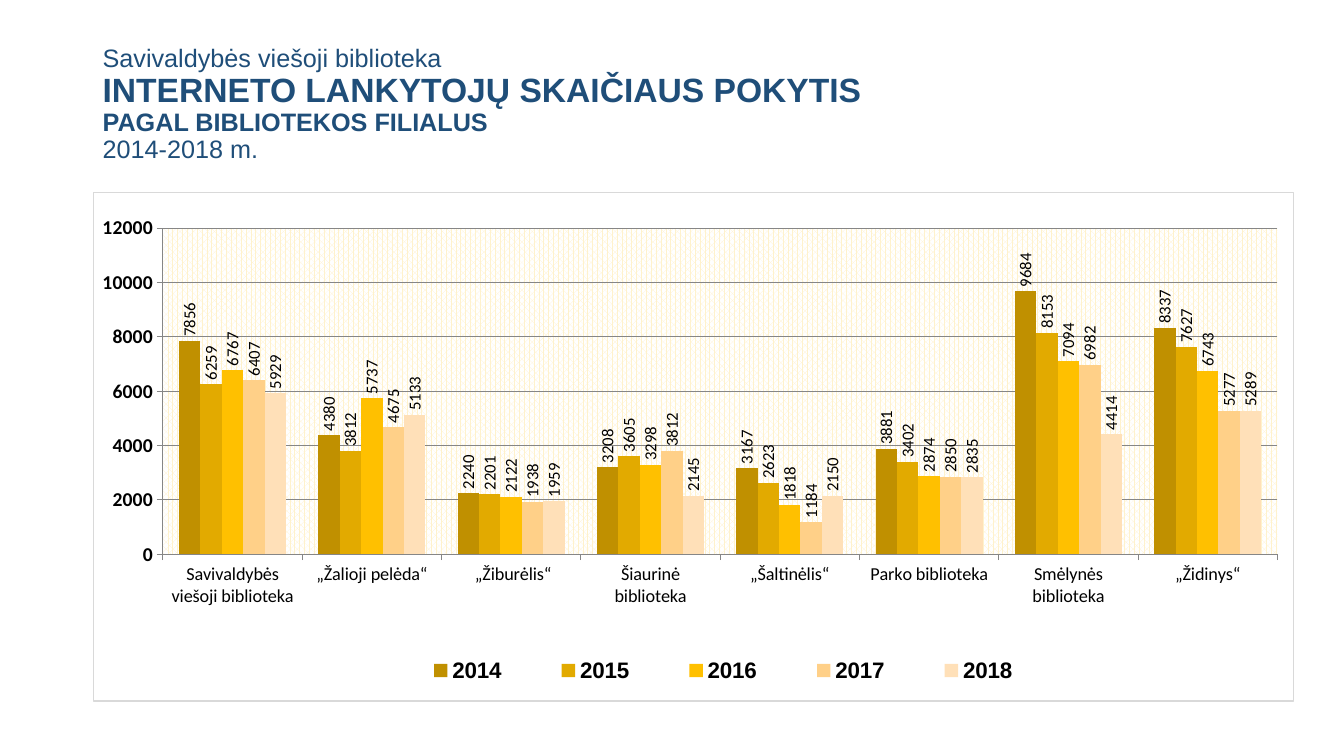
import pptx
import pptx.chart.data
import pptx.dml.color
import pptx.enum.chart
import pptx.enum.text
import pptx.oxml
import pptx.oxml.ns
import pptx.util

Inches = pptx.util.Inches
Pt = pptx.util.Pt
RGBColor = pptx.dml.color.RGBColor
qn = pptx.oxml.ns.qn

NAVY = RGBColor(0x1F, 0x4E, 0x79)
BLACK = RGBColor(0, 0, 0)
GREY = RGBColor(0x86, 0x86, 0x86)
BORDER = RGBColor(0xD9, 0xD9, 0xD9)
CREAM = RGBColor(0xFF, 0xF2, 0xCC)
WHITE = RGBColor(0xFF, 0xFF, 0xFF)
YEAR_COLORS = [
    RGBColor(0xC0, 0x90, 0x00),
    RGBColor(0xE2, 0xAA, 0x00),
    RGBColor(0xFF, 0xC0, 0x00),
    RGBColor(0xFF, 0xD0, 0x88),
    RGBColor(0xFF, 0xE0, 0xB8),
]

# text, size, bold
TITLE = [
    ("Savivaldybės viešoji biblioteka ", 18, False),
    ("INTERNETO LANKYTOJŲ SKAIČIAUS POKYTIS", 24, True),
    ("PAGAL BIBLIOTEKOS FILIALUS", 18, True),
    ("2014-2018 m.", 18, False),
]
LIBRARIES = [
    "Savivaldybės viešoji biblioteka", "„Žalioji pelėda“", " „Žiburėlis“",
    "Šiaurinė biblioteka", "„Šaltinėlis“", "Parko biblioteka",
    "Smėlynės biblioteka", "„Židinys“",
]
VISITORS = {
    "2014": (7856, 4380, 2240, 3208, 3167, 3881, 9684, 8337),
    "2015": (6259, 3812, 2201, 3605, 2623, 3402, 8153, 7627),
    "2016": (6767, 5737, 2122, 3298, 1818, 2874, 7094, 6743),
    "2017": (6407, 4675, 1938, 3812, 1184, 2850, 6982, 5277),
    "2018": (5929, 5133, 1959, 2145, 2150, 2835, 4414, 5289),
}


def chart_xml(tag, inner):
    return pptx.oxml.parse_xml(
        f'<c:{tag} {pptx.oxml.ns.nsdecls("c", "a")}>{inner}</c:{tag}>')


def set_layout(parent, index, x, y, w, h, inner=False):
    """Place a chart part by fractions of the chart's size."""
    for old in parent.findall(qn("c:layout")):
        parent.remove(old)
    target = '<c:layoutTarget val="inner"/>' if inner else ""
    modes = '<c:xMode val="edge"/><c:yMode val="edge"/>'
    box = "".join(f'<c:{k} val="{v}"/>' for k, v in zip("xywh", (x, y, w, h)))
    parent.insert(index, chart_xml(
        "layout", f"<c:manualLayout>{target}{modes}{box}</c:manualLayout>"))


class SlideBuilder:
    def __init__(self, prs):
        self.slide = prs.slides.add_slide(prs.slide_layouts[6])

    def style(self, font, size, name="Calibri", bold=False, color=BLACK):
        font.size, font.name, font.bold = Pt(size), name, bold
        font.color.rgb = color

    def title(self, lines, x, y, w, h):
        tf = self.slide.shapes.add_textbox(
            Inches(x), Inches(y), Inches(w), Inches(h)).text_frame
        tf.word_wrap = True
        tf.vertical_anchor = pptx.enum.text.MSO_ANCHOR.MIDDLE
        p = tf.paragraphs[0]
        p.text = "\v".join(text for text, _, _ in lines)
        p.line_spacing = 0.9
        for r, (_, size, bold) in zip(p.runs, lines):
            self.style(r.font, size, "Arial", bold, NAVY)

    def column_chart(self, categories, series, x, y, w, h):
        data = pptx.chart.data.CategoryChartData()
        data.categories = categories
        for name, values in series.items():
            data.add_series(name, values)
        chart = self.slide.shapes.add_chart(
            pptx.enum.chart.XL_CHART_TYPE.COLUMN_CLUSTERED,
            Inches(x), Inches(y), Inches(w), Inches(h), data).chart
        chart.has_title = False
        self.style(chart.font, 10)
        self.columns(chart.plots[0])
        self.axes(chart)
        self.legend(chart)
        self.backgrounds(chart)

    def columns(self, plot):
        plot.gap_width, plot.overlap = 150, 0
        plot.vary_by_categories = False
        for ser, color in zip(plot.series, YEAR_COLORS):
            ser.format.fill.solid()
            ser.format.fill.fore_color.rgb = color
            ser.invert_if_negative = False
            labels = ser.data_labels
            labels.show_value = True
            labels.position = pptx.enum.chart.XL_LABEL_POSITION.OUTSIDE_END
            self.style(labels.font, 12)

    def axes(self, chart):
        cat, val = chart.category_axis, chart.value_axis
        self.style(cat.tick_labels.font, 13)
        self.style(val.tick_labels.font, 14, bold=True)
        val.minimum_scale, val.maximum_scale, val.major_unit = 0, 12000, 2000
        val.has_major_gridlines = True
        for part in (cat, val, val.major_gridlines):
            part.format.line.color.rgb = GREY
            part.format.line.width = Pt(0.75)
        for axis in (cat, val):
            axis.major_tick_mark = pptx.enum.chart.XL_TICK_MARK.OUTSIDE

    def legend(self, chart):
        chart.has_legend = True
        chart.legend.position = pptx.enum.chart.XL_LEGEND_POSITION.BOTTOM
        chart.legend.include_in_layout = False
        self.style(chart.legend.font, 16, "Arial", True)
        set_layout(chart.element.find(".//" + qn("c:legend")), 1,
                   0.24, 0.89, 0.57, 0.1)

    def backgrounds(self, chart):
        """Upright labels, patterned plot area and framed chart."""
        root = chart.element
        for labels in root.iter(qn("c:dLbls")):
            body = labels.find(".//" + qn("a:bodyPr"))
            body.set("rot", "-5400000")
            body.set("vert", "horz")
        area = root.find(".//" + qn("c:plotArea"))
        set_layout(area, 0, 0.058, 0.071, 0.929, 0.641, inner=True)
        area.append(chart_xml("spPr", (
            '<a:pattFill prst="pct70">'
            f'<a:fgClr><a:srgbClr val="{CREAM}"/></a:fgClr>'
            f'<a:bgClr><a:srgbClr val="{WHITE}"/></a:bgClr></a:pattFill>')))
        root.find(qn("c:chart")).addnext(chart_xml("spPr", (
            f'<a:solidFill><a:srgbClr val="{WHITE}"/></a:solidFill>'
            f'<a:ln w="{Pt(0.75)}"><a:solidFill><a:srgbClr val="{BORDER}"/>'
            '</a:solidFill></a:ln>')))


def main():
    prs = pptx.Presentation()
    prs.slide_width, prs.slide_height = Inches(13.33), Inches(7.5)
    builder = SlideBuilder(prs)
    builder.title(TITLE, 0.92, 0.4, 11.5, 1.28)
    builder.column_chart(LIBRARIES, VISITORS, 0.92, 1.9, 11.91, 5.06)
    prs.save("out.pptx")


if __name__ == "__main__":
    main()
